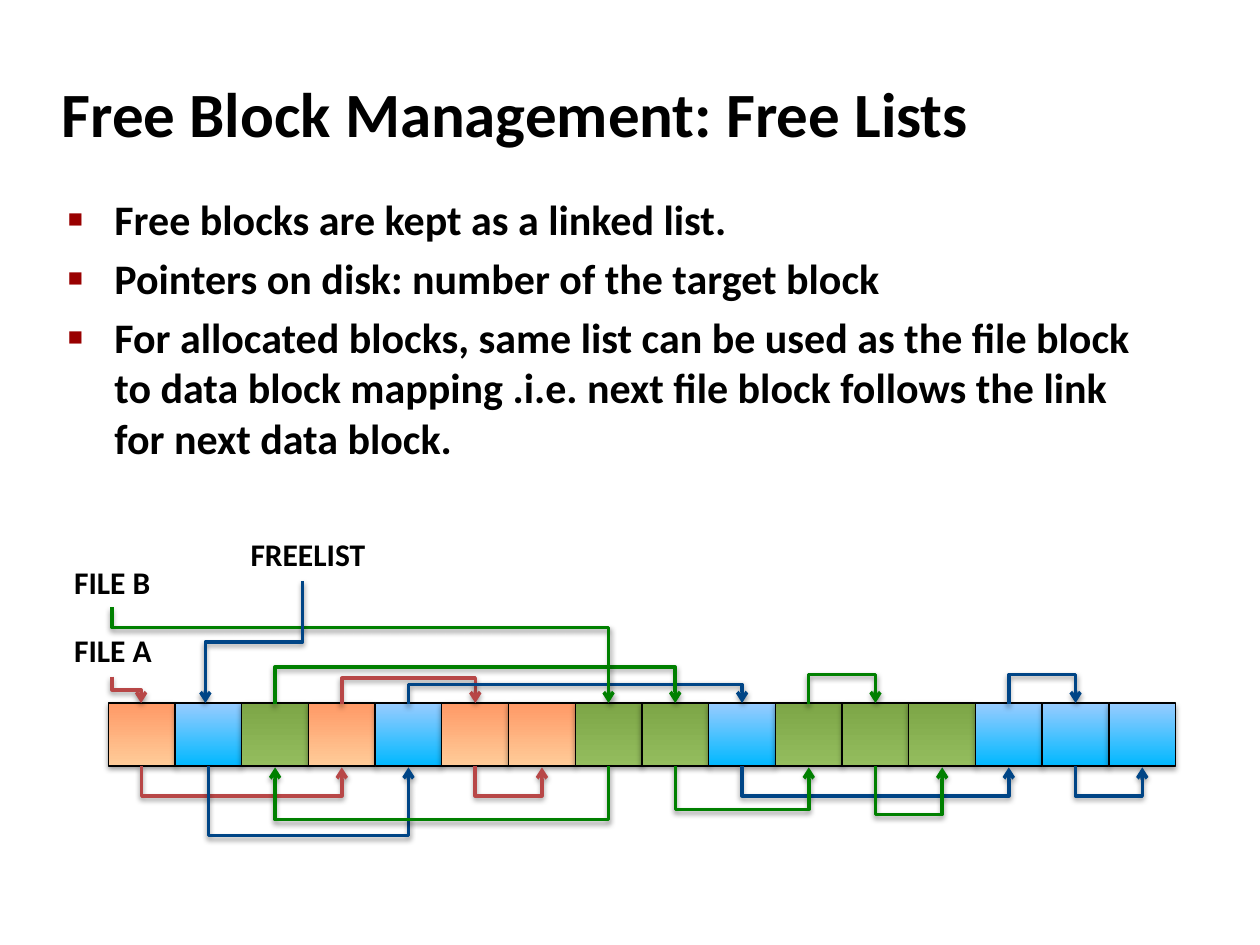
from typing import NamedTuple

from lxml.etree import SubElement
from pptx import Presentation
from pptx.dml.color import RGBColor
from pptx.enum.shapes import MSO_CONNECTOR, MSO_SHAPE
from pptx.enum.text import MSO_ANCHOR, MSO_AUTO_SIZE
from pptx.oxml.ns import qn
from pptx.util import Inches, Pt

BLACK = RGBColor(0x00, 0x00, 0x00)
RED = RGBColor(0xB8, 0x47, 0x47)
BLUE = RGBColor(0x00, 0x45, 0x86)
GREEN = RGBColor(0x00, 0x80, 0x00)
BULLET = RGBColor(0x99, 0x00, 0x00)


class Kind(NamedTuple):
    low: RGBColor
    high: RGBColor
    alpha: int
    dist: float


class Link(NamedTuple):
    color: RGBColor
    start: int
    end: int
    bend: float


class Entry(NamedTuple):
    name: str
    left: float
    top: float
    width: float
    color: RGBColor
    start: tuple[float, float]
    end: tuple[float, float]


KINDS = {
    "A": Kind(RGBColor(0xFF, 0xCC, 0x99), RGBColor(0xFF, 0x99, 0x66), 38, 1.6),
    "F": Kind(RGBColor(0x00, 0xB8, 0xFF), RGBColor(0x99, 0xCC, 0xFF), 35, 1.8),
    "B": Kind(RGBColor(0x94, 0xBD, 0x5E), RGBColor(0x7D, 0xA6, 0x47), 38, 1.6),
}

# Disk row: A and B are file blocks, F is a free block
DISK = "AFBAFAABBFBBBFFF"
LEFT, TOP, HIGH = 0.86, 5.58, 0.5
STEP = 8.47 / len(DISK)
BASE = TOP + HIGH

LINKS = [
    Link(RED, 0, 3, 6.32), Link(RED, 3, 5, 5.38), Link(RED, 5, 6, 6.32),
    Link(BLUE, 1, 4, 6.64), Link(BLUE, 4, 9, 5.43), Link(BLUE, 9, 13, 6.32),
    Link(BLUE, 13, 14, 5.35), Link(BLUE, 14, 15, 6.32),
    Link(GREEN, 7, 2, 6.51), Link(GREEN, 2, 8, 5.29), Link(GREEN, 8, 10, 6.43),
    Link(GREEN, 10, 11, 5.35), Link(GREEN, 11, 12, 6.47),
]
ENTRIES = [
    Entry("FILE B", 0.49, 4.42, 0.83, GREEN, (0.89, 4.82), (4.83, TOP)),
    Entry("FILE A", 0.49, 4.96, 0.84, RED, (0.89, 5.37), (1.12, TOP)),
    Entry("FREELIST", 1.89, 4.2, 1.14, BLUE, (2.4, 4.61), (1.63, TOP)),
]
POINTS = [
    "Free blocks are kept as a linked list.",
    "Pointers on disk: number of the target block",
    "For allocated blocks, same list can be used as the file block to data "
    "block mapping .i.e. next file block follows the link for next data block.",
]

# Frame formats
WRAP = {"word_wrap": True}
TITLE = {"word_wrap": True, "vertical_anchor": MSO_ANCHOR.MIDDLE}
LABEL = {"word_wrap": False, "auto_size": MSO_AUTO_SIZE.SHAPE_TO_FIT_TEXT}


def apply(item, form: dict) -> None:
    for name, value in form.items():
        setattr(item, name, value)


def add_text(slide, box: tuple, lines: list[str], size: int, form: dict) -> list:
    shape = slide.shapes.add_textbox(*map(Inches, box))
    frame = shape.text_frame
    apply(frame, form)
    frame.text = "\n".join(lines)
    for para in frame.paragraphs:
        font = para.runs[0].font
        apply(font, {"name": "Calibri", "size": Pt(size), "bold": True})
        font.color.rgb = BLACK
    return list(frame.paragraphs)


def indent(para, left: float, first: float):
    props = para._p.get_or_add_pPr()
    props.set("marL", str(Inches(left)))
    props.set("indent", str(Inches(first)))
    return props


def add_bullet(para) -> None:
    para.space_before = Pt(4.8)
    props = indent(para, 0.38, -0.37)
    color = SubElement(props, qn("a:buClr"))
    SubElement(color, qn("a:srgbClr"), val=str(BULLET))
    SubElement(props, qn("a:buSzPct"), val="60000")
    SubElement(props, qn("a:buFont"), typeface="Arial")
    SubElement(props, qn("a:buChar"), char="■")


def add_shadow(shape, alpha: int = 38, dist: float = 1.6) -> None:
    effect = SubElement(shape._element.spPr, qn("a:effectLst"))
    outer = SubElement(effect, qn("a:outerShdw"), blurRad=str(Pt(3.1)),
                       dist=str(Pt(dist)), dir="5400000", rotWithShape="0")
    color = SubElement(outer, qn("a:srgbClr"), val=str(BLACK))
    SubElement(color, qn("a:alpha"), val=str(alpha * 1000))


def add_block(slide, spot: int, kind: Kind) -> None:
    box = (LEFT + spot * STEP, TOP, STEP, HIGH)
    shape = slide.shapes.add_shape(MSO_SHAPE.RECTANGLE, *map(Inches, box))
    shape.fill.gradient()
    shape.fill.gradient_angle = 90
    for stop, color in zip(shape.fill.gradient_stops, (kind.low, kind.high)):
        stop.color.rgb = color
    shape.line.color.rgb = BLACK
    shape.line.width = Pt(0.75)
    add_shadow(shape, kind.alpha, kind.dist)


def add_link(slide, color: RGBColor, start: tuple, end: tuple, bend: float) -> None:
    """Draw an elbow arrow that leaves vertically and turns at height bend."""
    (x1, y1), (x2, y2) = start, end
    wide, high = abs(y2 - y1), abs(x2 - x1)
    left, top = (x1 + x2 - wide) / 2, (y1 + y2 - high) / 2
    box = (left, top, left + wide, top + high)
    line = slide.shapes.add_connector(MSO_CONNECTOR.ELBOW, *map(Inches, box))
    props = line._element.spPr

    # The box is turned a quarter, so its width runs down the slide
    down, right = y2 > y1, x2 > x1
    turn = {"rot": "16200000" if down and right else "5400000",
            "flipH": str(int(right)), "flipV": str(int(not down))}
    for name, value in turn.items():
        props.find(qn("a:xfrm")).set(name, value)
    ratio = round((bend - y1) / (y2 - y1) * 100000)
    SubElement(props.find(qn("a:prstGeom")).find(qn("a:avLst")), qn("a:gd"),
               name="adj1", fmla=f"val {ratio}")

    line.line.color.rgb = color
    line.line.width = Pt(2)
    SubElement(props.find(qn("a:ln")), qn("a:tailEnd"), type="arrow")
    add_shadow(line)


def middle(spot: int) -> float:
    return LEFT + (spot + 0.5) * STEP


def main() -> None:
    deck = Presentation()
    apply(deck, {"slide_width": Inches(10), "slide_height": Inches(7.5)})
    slide = deck.slides.add_slide(deck.slide_layouts[6])

    # Title and points
    title = add_text(slide, (0.39, 0.48, 8.3, 0.83),
                     ["Free Block Management: Free Lists"], 36, TITLE)
    indent(title[0], 0.13, -0.13)
    for para in add_text(slide, (0.43, 1.49, 8.64, 5.44), POINTS, 24, WRAP):
        add_bullet(para)

    # Disk blocks
    for spot, key in enumerate(DISK):
        add_block(slide, spot, KINDS[key])

    # Links between blocks, below or above the row
    for link in LINKS:
        edge, tip = (BASE, BASE + 0.01) if link.bend > BASE else (TOP + 0.01, TOP)
        add_link(slide, link.color, (middle(link.start), edge),
                 (middle(link.end), tip), link.bend)

    # List heads, each with an arrow to its first block
    for head in ENTRIES:
        box = (head.left, head.top, head.width, 0.4)
        add_text(slide, box, [head.name], 18, LABEL)
    for head in ENTRIES:
        bend = 4.98 if head.name == "FILE B" else (head.start[1] + head.end[1]) / 2
        add_link(slide, head.color, head.start, head.end, bend)

    deck.save("out.pptx")


if __name__ == "__main__":
    main()
